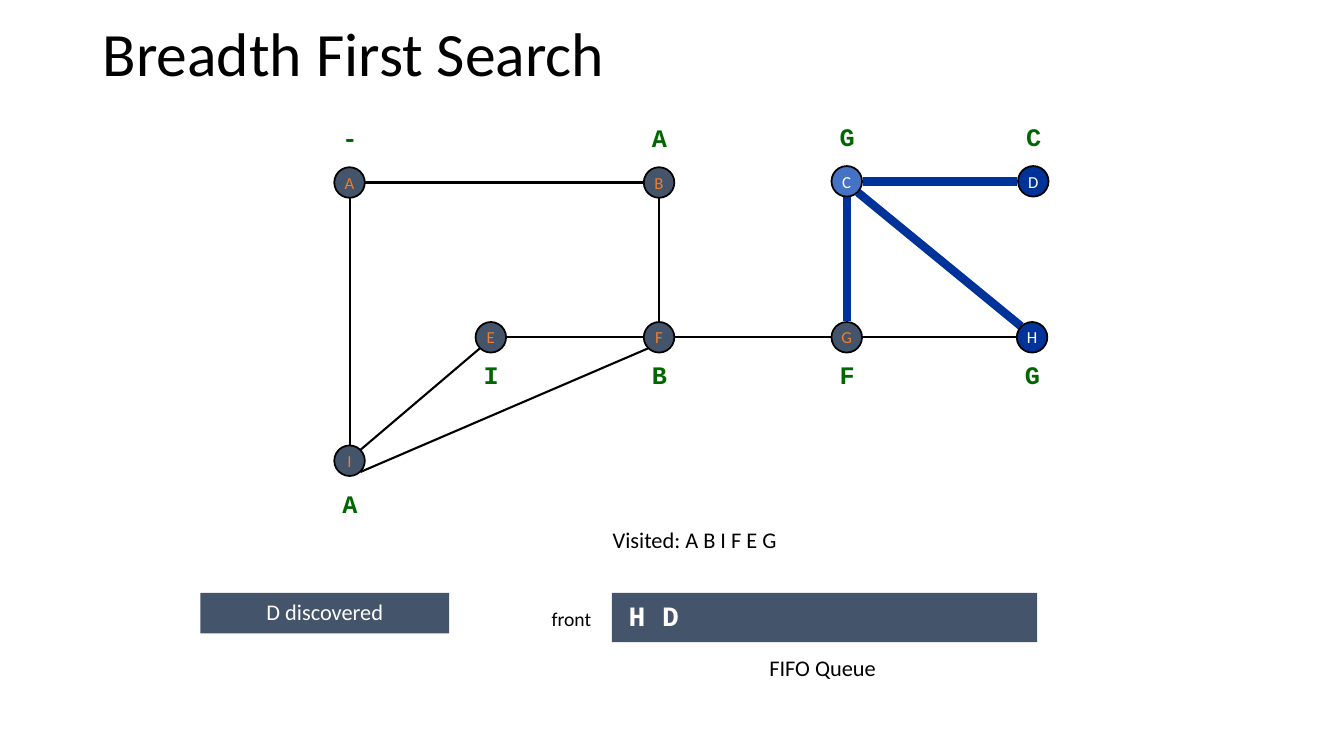
"""Draw one step of a breadth first search with its graph and queue."""
from dataclasses import dataclass

from lxml import etree
from pptx import Presentation
from pptx import util as u
from pptx.dml.color import RGBColor
from pptx.enum import shapes, text
from pptx.oxml import ns

BLACK = RGBColor(0x00, 0x00, 0x00)
WHITE = RGBColor(0xFF, 0xFF, 0xFF)
SLATE = RGBColor(0x44, 0x54, 0x6A)
ORANGE = RGBColor(0xED, 0x7D, 0x31)
NAVY = RGBColor(0x00, 0x33, 0x99)
BLUE = RGBColor(0x44, 0x72, 0xC4)
GREEN = RGBColor(0x00, 0x66, 0x00)

DIAMETER = 0.77
REACH = 0.4
ABOVE, BELOW = -1.65, 0.43
LEFT, CENTER = text.PP_ALIGN.LEFT, text.PP_ALIGN.CENTER
TOP, MIDDLE = text.MSO_ANCHOR.TOP, text.MSO_ANCHOR.MIDDLE
COMPASS = {
    "E": (1, 0), "W": (-1, 0), "N": (0, -1), "S": (0, 1),
    "NE": (0.7, -0.7), "NW": (-0.7, -0.7), "SE": (0.7, 0.7), "SW": (-0.7, 0.7),
}


@dataclass(frozen=True)
class Style:
    size: float
    color: RGBColor = BLACK
    font: str = "Calibri"
    bold: bool = False
    align: text.PP_ALIGN = LEFT
    anchor: text.MSO_ANCHOR = TOP
    inset: float = 0.25
    wrap: bool = True
    spacing: float = 1.0


@dataclass(frozen=True)
class Node:
    name: str
    x: float
    y: float
    parent: str
    parent_dy: float
    fill: RGBColor = SLATE
    color: RGBColor = ORANGE


@dataclass(frozen=True)
class Edge:
    start: str
    start_side: str
    end: str
    end_side: str
    color: RGBColor = BLACK
    weight: float = 1.5


@dataclass(frozen=True)
class Panel:
    words: str
    left: float
    top: float
    width: float
    height: float
    style: Style
    fill: RGBColor | None = None


NODES = [
    Node("A", 8.81, 4.6, "-", ABOVE),
    Node("B", 16.61, 4.6, "A", ABOVE),
    Node("C", 21.34, 4.57, "G", ABOVE, BLUE, WHITE),
    Node("D", 26.04, 4.57, "C", ABOVE, NAVY, WHITE),
    Node("E", 12.37, 8.5, "I", BELOW),
    Node("F", 16.61, 8.5, "B", BELOW),
    Node("G", 21.34, 8.5, "F", BELOW),
    Node("H", 26.01, 8.5, "G", BELOW, NAVY, WHITE),
    Node("I", 8.81, 11.61, "A", 0.56),
]

EDGES = [
    Edge("A", "S", "I", "N"),
    Edge("F", "N", "B", "S"),
    Edge("E", "E", "F", "W"),
    Edge("I", "NE", "E", "SW"),
    Edge("A", "E", "B", "W"),
    Edge("I", "SE", "F", "SW"),
    Edge("G", "E", "H", "W"),
    Edge("F", "E", "G", "W"),
    Edge("C", "S", "G", "N", NAVY, 6),
    Edge("C", "SE", "H", "NW", NAVY, 6),
    Edge("C", "E", "D", "W", NAVY, 6),
]

PARENT_STYLE = Style(18, GREEN, "Courier New", True)
QUEUE_STYLE = Style(20, WHITE, "Courier New", True, inset=0.42)

PANELS = [
    Panel("Breadth First Search", 2.34, 0.38, 29.21, 2.08,
          Style(44, anchor=MIDDLE, spacing=0.9)),
    Panel("Visited: A B I F E G", 15.19, 13.13, 10.92, 0.94, Style(16)),
    Panel("D discovered", 5.05, 14.94, 6.27, 1.02,
          Style(16, WHITE, align=CENTER, inset=0), SLATE),
    Panel("front", 13.36, 15.16, 2.08, 0.86, Style(14, align=CENTER)),
    Panel("H D", 15.42, 14.94, 10.72, 1.24, QUEUE_STYLE, SLATE),
    Panel("FIFO Queue", 15.42, 16.36, 10.62, 0.94, Style(16, align=CENTER)),
]


def write(shape, words: str, style: Style) -> None:
    """Put styled text into a shape."""
    frame = shape.text_frame
    frame.text = words
    frame.word_wrap = style.wrap
    frame.vertical_anchor = style.anchor
    frame.margin_left = frame.margin_right = u.Cm(style.inset)
    frame.margin_top = frame.margin_bottom = u.Cm(0.13)
    para = frame.paragraphs[0]
    para.alignment = style.align
    para.line_spacing = style.spacing
    font = para.runs[0].font
    font.name, font.size, font.bold = style.font, u.Pt(style.size), style.bold
    font.color.rgb = style.color


def draw_panel(page, panel: Panel) -> None:
    """Draw a text box, or a filled rectangle when a fill is given."""
    area = [u.Cm(n) for n in (panel.left, panel.top, panel.width, panel.height)]
    if panel.fill is None:
        box = page.shapes.add_textbox(*area)
    else:
        box = page.shapes.add_shape(shapes.MSO_SHAPE.RECTANGLE, *area)
        box.shadow.inherit = False
        box.fill.solid()
        box.fill.fore_color.rgb = panel.fill
        box.line.fill.background()
    write(box, panel.words, panel.style)


def draw_edge(page, edge: Edge, nodes: dict[str, Node]) -> None:
    """Join the rims of two nodes."""
    points = []
    for name, side in ((edge.start, edge.start_side), (edge.end, edge.end_side)):
        dx, dy = COMPASS[side]
        points += [u.Cm(nodes[name].x + REACH * dx), u.Cm(nodes[name].y + REACH * dy)]
    line = page.shapes.add_connector(shapes.MSO_CONNECTOR.STRAIGHT, *points)
    line.line.color.rgb = edge.color
    line.line.width = u.Pt(edge.weight)
    etree.SubElement(line._element.spPr, ns.qn("a:effectLst"))


def draw_node(page, node: Node) -> None:
    """Draw a node circle and the label of its parent."""
    circle = page.shapes.add_shape(
        shapes.MSO_SHAPE.OVAL, u.Cm(node.x - DIAMETER / 2),
        u.Cm(node.y - DIAMETER / 2), u.Cm(DIAMETER), u.Cm(DIAMETER))
    circle.shadow.inherit = False
    circle.fill.solid()
    circle.fill.fore_color.rgb = node.fill
    circle.line.color.rgb = BLACK
    circle.line.width = u.Pt(1.25)
    write(circle, node.name,
          Style(12, node.color, align=CENTER, anchor=MIDDLE, wrap=False))
    draw_panel(page, Panel(node.parent, node.x - 0.43, node.y + node.parent_dy,
                           0.94, 1.02, PARENT_STYLE))


def main() -> None:
    """Build and save the deck."""
    deck = Presentation()
    deck.slide_width, deck.slide_height = u.Cm(33.87), u.Cm(19.05)
    page = deck.slides.add_slide(deck.slide_layouts[6])
    nodes = {node.name: node for node in NODES}
    for edge in EDGES:
        draw_edge(page, edge, nodes)
    for node in NODES:
        draw_node(page, node)
    for panel in PANELS:
        draw_panel(page, panel)
    deck.save("out.pptx")


if __name__ == "__main__":
    main()
